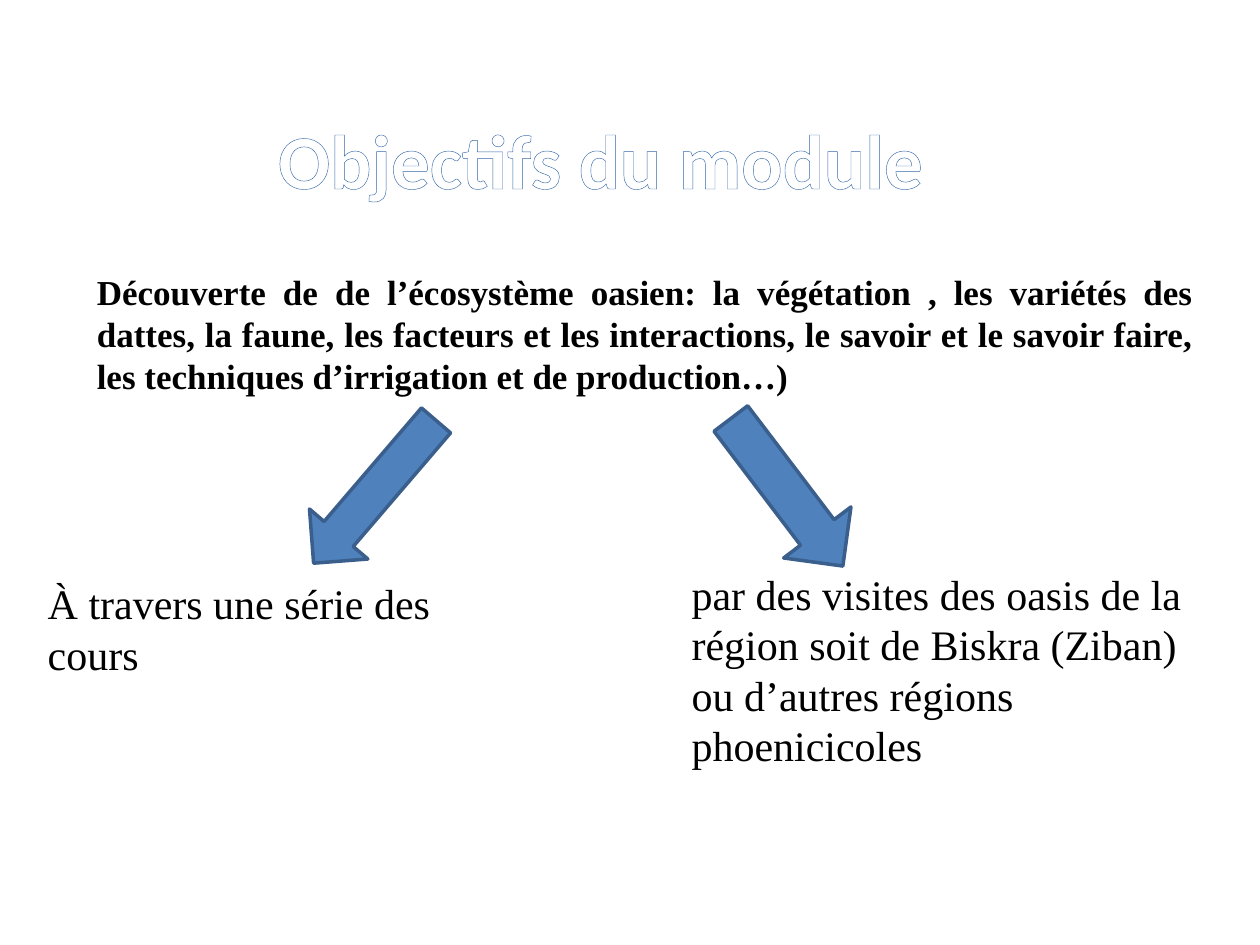
from lxml import etree
from pptx import Presentation
from pptx import util as u
from pptx.dml.color import RGBColor
from pptx.enum import shapes, text
from pptx.oxml.ns import qn

WIDTH, HEIGHT = 10, 7.5
COLORS = {
    "title": "FFFFFF",
    "outline_light": "7EA6EA",
    "outline_dark": "3568A8",
    "body": "000000",
    "arrow": "4F81BD",
    "arrow_line": "3A5F8C",
}
SERIF = "Times New Roman"
FORMATS = {
    "title": {"name": "Calibri", "size": u.Pt(44), "bold": True},
    "goal": {"name": SERIF, "size": u.Pt(20), "bold": True},
    "means": {"name": SERIF, "size": u.Pt(24), "bold": False},
}


def color(name):
    return RGBColor.from_string(COLORS[name])


def area(left, top, width, height):
    """Turn shares of the slide's size into lengths."""
    return (u.Inches(left * WIDTH), u.Inches(top * HEIGHT),
            u.Inches(width * WIDTH), u.Inches(height * HEIGHT))


def add_text(page, place, wording, style, fill="body", align=text.PP_ALIGN.LEFT):
    box = page.shapes.add_textbox(*area(*place))
    box.text_frame.word_wrap = True
    box.text_frame.auto_size = text.MSO_AUTO_SIZE.SHAPE_TO_FIT_TEXT
    para = box.text_frame.paragraphs[0]
    para.alignment = align
    span = para.add_run()
    span.text = wording
    for key, value in FORMATS[style].items():
        setattr(span.font, key, value)
    span.font.color.rgb = color(fill)
    return span


def outline_text(span, width, stops):
    """Draw a gradient line around the letters."""
    line = etree.Element(qn("a:ln"), w=str(u.Pt(width)))
    gradient = etree.SubElement(line, qn("a:gradFill"))
    stop_list = etree.SubElement(gradient, qn("a:gsLst"))
    for percent, name in stops:
        stop = etree.SubElement(stop_list, qn("a:gs"), pos=str(percent * 1000))
        etree.SubElement(stop, qn("a:srgbClr"), val=COLORS[name])
    etree.SubElement(gradient, qn("a:lin"), ang="5400000")
    span.font._element.insert(0, line)


def add_arrow(page, place, rotation):
    arrow = page.shapes.add_shape(shapes.MSO_SHAPE.DOWN_ARROW, *area(*place))
    arrow.rotation = rotation
    arrow.shadow.inherit = False
    arrow.fill.solid()
    arrow.fill.fore_color.rgb = color("arrow")
    arrow.line.color.rgb = color("arrow_line")
    arrow.line.width = u.Pt(2)


def main():
    deck = Presentation()
    deck.slide_width, deck.slide_height = u.Inches(WIDTH), u.Inches(HEIGHT)
    page = deck.slides.add_slide(deck.slide_layouts[6])

    # Title
    title = add_text(page, (0.154, 0.112, 0.646, 0.112), "Objectifs du module",
                     "title", "title", text.PP_ALIGN.CENTER)
    outline_text(title, 2.48, [(0, "outline_light"), (75, "outline_dark"),
                               (100, "outline_dark")])

    # Goal of the module
    add_text(page, (0.067, 0.28, 0.89, 0.193),
             "Découverte de de l’écosystème oasien: la végétation , les variétés "
             "des dattes, la faune, les facteurs et les interactions, le savoir et "
             "le savoir faire, les techniques d’irrigation et de production…)",
             "goal", align=text.PP_ALIGN.JUSTIFY)

    # Two means of reaching it
    add_text(page, (0.539, 0.595, 0.429, 0.229),
             "par des visites des oasis de la région soit de Biskra (Ziban) "
             "ou d’autres régions phoenicicoles", "means")
    add_text(page, (0.028, 0.605, 0.402, 0.121),
             "À travers une série des cours", "means")

    # Arrows from the goal to each means
    add_arrow(page, (0.267, 0.421, 0.061, 0.199), 40.6)
    add_arrow(page, (0.591, 0.423, 0.067, 0.196), 322.8)

    deck.save("out.pptx")


if __name__ == "__main__":
    main()
